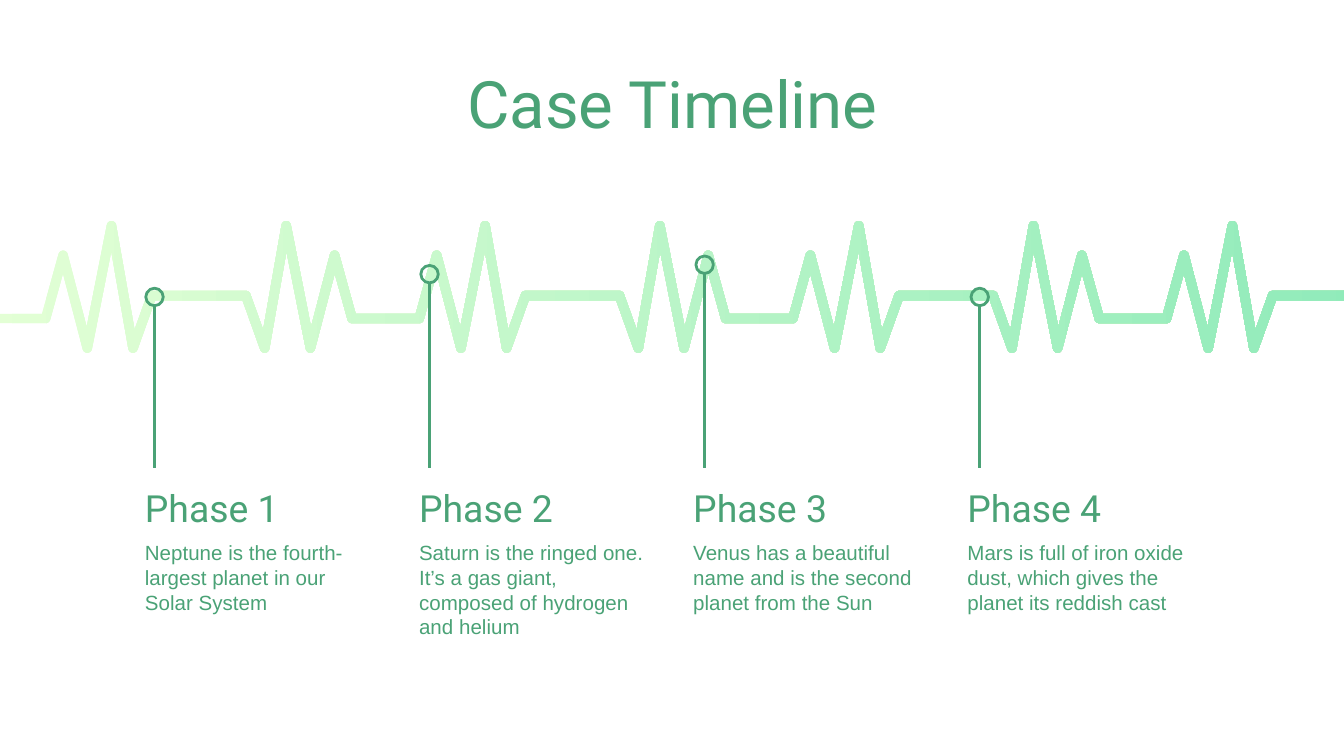
import math

import pptx
import pptx.dml.color
import pptx.enum.shapes
import pptx.enum.text
import pptx.oxml.ns
import pptx.util
from lxml import etree

Inches = pptx.util.Inches
RGBColor = pptx.dml.color.RGBColor
Anchor = pptx.enum.text.MSO_ANCHOR
Align = pptx.enum.text.PP_ALIGN

GREEN = RGBColor(0x4A, 0xA2, 0x76)
PALE = RGBColor(0xE3, 0xFF, 0xD5)
MINT = RGBColor(0x90, 0xEB, 0xBA)

# Heights of the pulse, in inches
LOW, HIGH = 2.37, 2.2
PEAK, BUMP, DIP = 1.68, 1.9, 2.59
WIDTH = 0.07
PERIOD = 2.78

# One beat, from the low level up to the high one
BEAT = [(0, LOW), (0.13, BUMP), (0.31, DIP), (0.49, PEAK), (0.65, DIP), (0.79, HIGH)]

# Name, text and height of the marker for each phase
PHASES = [
    ("Phase 1", "Neptune is the fourth-largest planet in our Solar System", 2.21),
    ("Phase 2", "Saturn is the ringed one. It’s a gas giant, composed of hydrogen and helium", 2.04),
    ("Phase 3", "Venus has a beautiful name and is the second planet from the Sun", 1.97),
    ("Phase 4", "Mars is full of iron oxide dust, which gives the planet its reddish cast", 2.21),
]


def pulse():
    """Centre line: rising beats alternate with mirrored, falling ones."""
    width = BEAT[-1][0]
    back = [(width - x, y) for x, y in reversed(BEAT)]
    pts = [(-0.13, LOW)]
    for i in range(4):
        left = 0.34 + PERIOD * i
        pts += [(left + x, y) for x, y in BEAT]
        if i < 3:
            pts += [(left + 1.49 + x, y) for x, y in back]
    return pts + [(10.16, HIGH)]


def band(line, half):
    """Outline of a line with round outer corners, round ends and sharp inner corners."""
    loop = line + line[-2:0:-1]
    edge = []
    for i, (x, y) in enumerate(loop):
        px, py = loop[i - 1]
        nx, ny = loop[(i + 1) % len(loop)]
        start = math.atan2(y - py, x - px)
        end = math.atan2(ny - y, nx - x)
        turn = math.pi - (start - end + math.pi) % math.tau
        side = start - math.pi / 2
        if turn > 0:
            steps = 8
            polar = [(half, side + turn * k / steps) for k in range(steps + 1)]
        else:
            polar = [(half / math.cos(turn / 2), side + turn / 2)]
        edge += [(x + r * math.cos(a), y + r * math.sin(a)) for r, a in polar]
    return edge


class Deck:
    font = "Roboto"
    color = GREEN
    weight = pptx.util.Pt(1.5)

    def __init__(self, slide):
        self.shapes = slide.shapes

    def text(self, text, left, top, width, height, *, size, font=None,
             align=Align.LEFT, anchor=Anchor.MIDDLE):
        box = self.shapes.add_textbox(Inches(left), Inches(top), Inches(width), Inches(height))
        frame = box.text_frame
        frame.word_wrap = True
        frame.vertical_anchor = anchor
        frame.margin_left = frame.margin_right = Inches(0.1)
        frame.margin_top = frame.margin_bottom = Inches(0.1)
        para = frame.paragraphs[0]
        para.alignment = align
        run = para.add_run()
        run.text = text
        run.font.name = font or self.font
        run.font.size = pptx.util.Pt(size)
        run.font.color.rgb = self.color

    def wave(self, edge):
        pts = [(Inches(x), Inches(y)) for x, y in edge]
        path = self.shapes.build_freeform(*pts[0])
        path.add_line_segments(pts[1:], close=True)
        shape = path.convert_to_shape()
        shape.shadow.inherit = False
        shape.line.fill.background()
        shape.fill.gradient()
        shape.fill.gradient_angle = 0
        for stop, color, place in zip(shape.fill.gradient_stops, (PALE, MINT), (0, 1)):
            stop.color.rgb = color
            stop.position = place

    def stem(self, x, top, end):
        line = self.shapes.add_connector(
            pptx.enum.shapes.MSO_CONNECTOR.STRAIGHT,
            Inches(x), Inches(top), Inches(x), Inches(end))
        self.stroke(line)
        etree.SubElement(line._element.spPr, pptx.oxml.ns.qn("a:effectLst"))

    def ring(self, x, y, size):
        shape = self.shapes.add_shape(
            pptx.enum.shapes.MSO_SHAPE.OVAL,
            Inches(x - size / 2), Inches(y - size / 2), Inches(size), Inches(size))
        shape.shadow.inherit = False
        shape.fill.background()
        self.stroke(shape)

    def stroke(self, shape):
        shape.line.color.rgb = self.color
        shape.line.width = self.weight


def main():
    prs = pptx.Presentation()
    prs.slide_width = Inches(10)
    prs.slide_height = Inches(10 * 9 / 16)
    deck = Deck(prs.slides.add_slide(prs.slide_layouts[6]))

    # Title
    deck.text("Case Timeline", 0.79, 0.59, 8.43, 0.35, size=35, align=Align.CENTER)

    # Pulse line
    deck.wave(band(pulse(), WIDTH / 2))

    # Phases with their markers
    ring = 0.13
    first, last = 1.15, 7.29
    for i, (name, note, y) in enumerate(PHASES):
        left = 0.98 + 2.04 * i
        x = first + (last - first) / 3 * i
        deck.text(name, left, 3.66, 1.93, 0.23, size=20)
        deck.text(note, left, 3.92, 1.93, 1.11, size=11, font="Arial", anchor=Anchor.TOP)
        deck.stem(x, y + ring / 2, 3.48)
        deck.ring(x, y, ring)

    prs.save("out.pptx")


if __name__ == "__main__":
    main()
